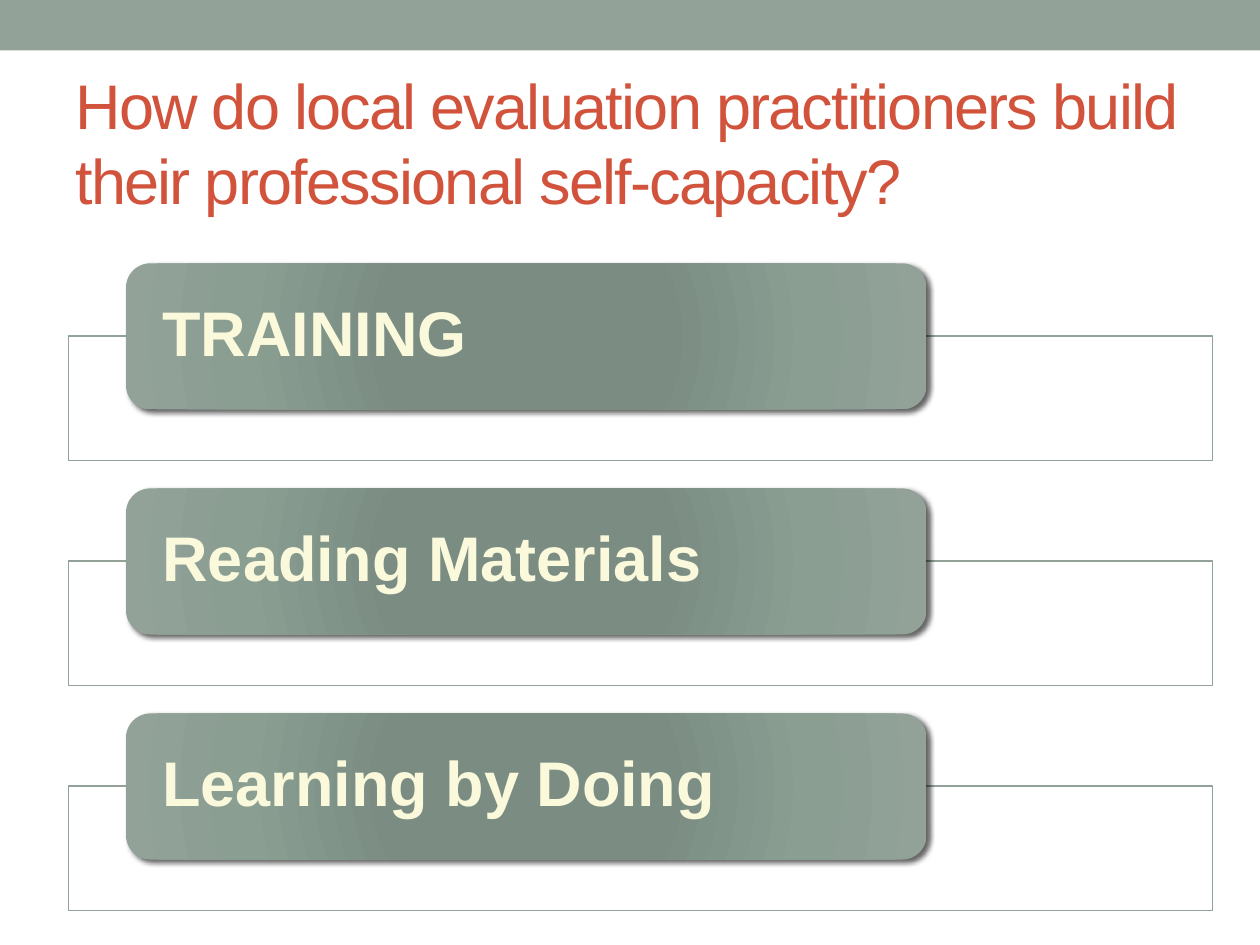
"""Build a slide listing three ways evaluation practitioners build capacity."""
from lxml import etree
from pptx import Presentation
from pptx.dml.color import RGBColor
from pptx.enum import shapes, text
from pptx.oxml import parse_xml
from pptx.oxml.ns import nsdecls, qn
from pptx.util import Pt

SAGE = RGBColor(0x93, 0xA2, 0x99)
WHITE = RGBColor(0xFF, 0xFF, 0xFF)
RED = RGBColor(0xD2, 0x53, 0x3C)
CREAM = RGBColor(0xFA, 0xF9, 0xDC)
GRADIENT_STOPS = [
    (0, RGBColor(0x7B, 0x8E, 0x82)),
    (34, RGBColor(0x7B, 0x8D, 0x83)),
    (70, RGBColor(0x8A, 0x9E, 0x92)),
    (100, SAGE),
]
TOPICS = ["TRAINING", "Reading Materials", "Learning by Doing"]
ROW_TOP, ROW_STEP = 150.5, 128.6


def add_text(slide, content, box, color, bold=False, inset=7.2, line_spacing=1.0, tracking=0):
    shape = slide.shapes.add_textbox(*(Pt(length) for length in box))
    frame = shape.text_frame
    frame.word_wrap = True
    frame.vertical_anchor = text.MSO_ANCHOR.MIDDLE
    frame.margin_left = frame.margin_right = Pt(inset)
    frame.margin_top = frame.margin_bottom = 0
    paragraph = frame.paragraphs[0]
    paragraph.line_spacing = line_spacing
    run = paragraph.add_run()
    run.text = content
    run.font.name = "Arial"
    run.font.size = Pt(36)
    run.font.bold = bold
    run.font.color.rgb = color
    if tracking:
        run.font._element.set("spc", str(tracking * 100))


def add_panel(slide, kind, box, fill, line=None):
    shape = slide.shapes.add_shape(kind, *(Pt(length) for length in box))
    shape.shadow.inherit = False
    shape.fill.solid()
    shape.fill.fore_color.rgb = fill
    if line is None:
        shape.line.fill.background()
    else:
        shape.line.color.rgb = line
        shape.line.width = Pt(0.75)
    return shape


presentation = Presentation()
presentation.slide_width, presentation.slide_height = Pt(720), Pt(540)
slide = presentation.slides.add_slide(presentation.slide_layouts[6])

add_panel(slide, shapes.MSO_SHAPE.RECTANGLE, (0, 0, 720, 28.8), SAGE)
add_text(
    slide,
    "How do local evaluation practitioners build their professional self-capacity?",
    (36, 42, 684, 78),
    RED,
    tracking=-1,
)

stops = "".join(
    f'<a:gs pos="{position * 1000}"><a:srgbClr val="{color}"/></a:gs>'
    for position, color in GRADIENT_STOPS
)
gradient = (
    f'<a:gradFill {nsdecls("a")} rotWithShape="1"><a:gsLst>{stops}</a:gsLst>'
    '<a:path path="circle"><a:fillToRect l="100000" t="100000" r="100000" b="100000"/>'
    "</a:path></a:gradFill>"
)

for index, topic in enumerate(TOPICS):
    top = ROW_TOP + index * ROW_STEP
    frame = add_panel(
        slide, shapes.MSO_SHAPE.RECTANGLE, (39, top + 41.5, 654, 71.2), WHITE, SAGE
    )
    frame_color = frame._element.spPr.find(qn("a:solidFill"))[0]
    etree.SubElement(frame_color, qn("a:alpha"), val="90000")

    card = add_panel(
        slide, shapes.MSO_SHAPE.ROUNDED_RECTANGLE, (72, top, 457.5, 83.5), SAGE
    )
    properties = card._element.spPr
    properties.replace(properties.find(qn("a:solidFill")), parse_xml(gradient))
    shadow = etree.SubElement(
        properties.find(qn("a:effectLst")),
        qn("a:outerShdw"),
        blurRad=str(Pt(3)),
        dist=str(Pt(2)),
        dir="2700000",
        rotWithShape="0",
    )
    shadow_color = etree.SubElement(shadow, qn("a:srgbClr"), val="000000")
    etree.SubElement(shadow_color, qn("a:alpha"), val="60000")

    add_text(
        slide, topic, (75.6, top + 4, 449.3, 75.5), CREAM,
        bold=True, inset=17.3, line_spacing=0.9,
    )

presentation.save("out.pptx")
